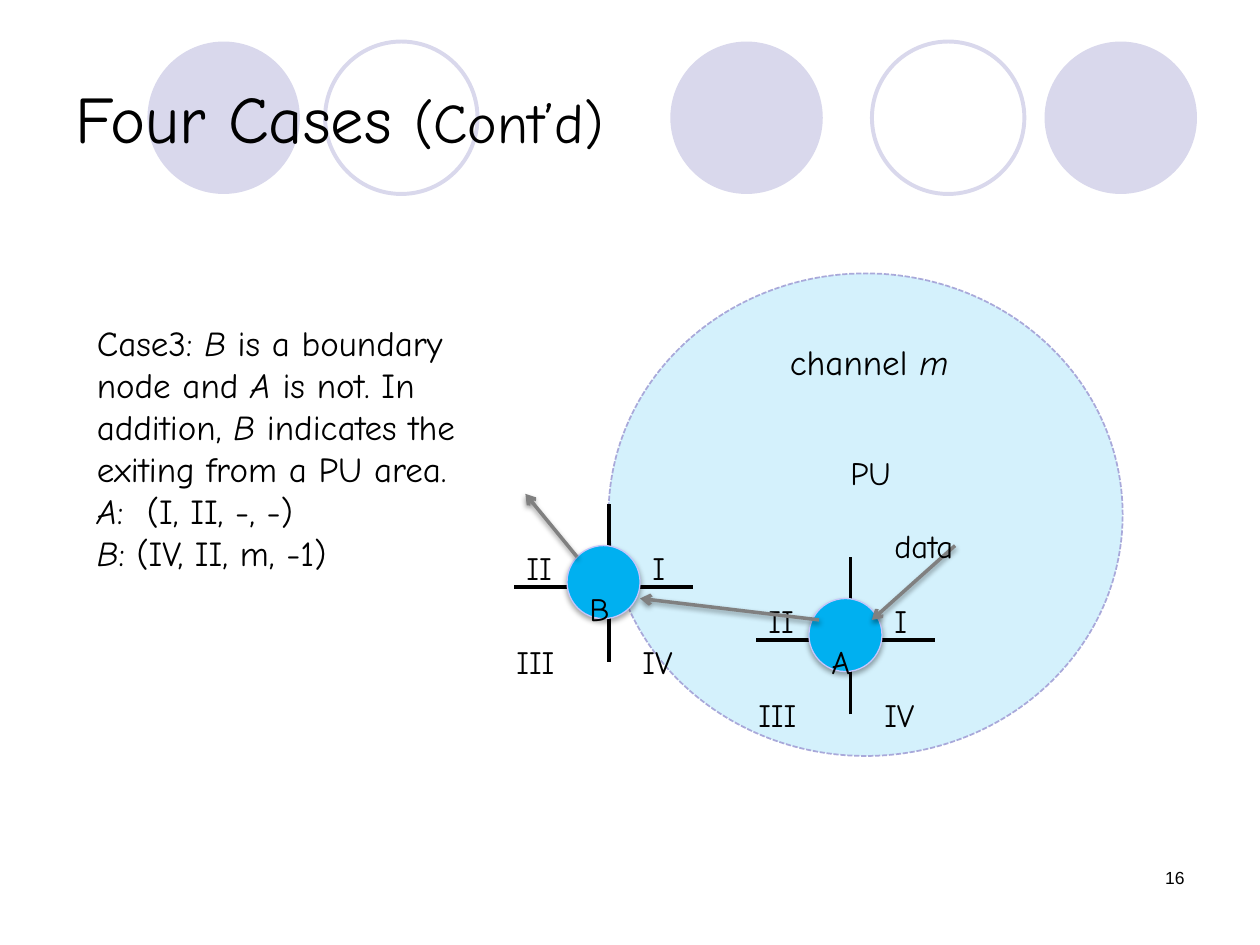
from lxml.etree import SubElement
from pptx import Presentation
from pptx.dml.color import RGBColor
from pptx.enum.dml import MSO_LINE_DASH_STYLE as Dash
from pptx.enum.shapes import MSO_CONNECTOR as Connector, MSO_SHAPE as Shape
from pptx.enum.text import MSO_ANCHOR as Anchor, MSO_AUTO_SIZE as AutoSize, PP_ALIGN as Align
from pptx.oxml.ns import qn
from pptx.util import Pt

PX = 9144  # 100 px to the inch
COLORS = {"ink": "000000", "lavender": "D9D8EC", "node": "00B0F0",
          "node_edge": "C6C6FB", "area_edge": "A9A9DA", "arrow": "808080"}

# Content: text is a list of paragraphs, each a list of (text, format) runs
ITALIC = {"italic": True}
TITLE = [[("Four Cases ", {}), ("(Cont’d)", {"size": 32})]]
CHANNEL = [[("channel ", {}), ("m", ITALIC)]]
CASE = [
    [("Case3: ", {}), ("B ", ITALIC), ("is a boundary node and ", {}), ("A", ITALIC),
     (" is not. In addition, ", {}), ("B", ITALIC),
     (" indicates the exiting from a PU area.", {})],
    [("A", ITALIC), (":  (I, II, -, -)", {})],
    [("B", ITALIC), (": (IV, II, m, -1)", {})],
]
HEADER_CIRCLES = [(532, True), (829, True), (117, True), (692, False), (258, False)]
NODES = {"A": (642, 475), "B": (450, 433)}  # left, top of the node's circle
QUADRANTS = [("I", 58, -33, 42), ("II", -42, -33, 83),  # dx, dy, width
             ("III", -50, 42, 83), ("IV", 50, 42, 67)]
ARROWS_TO_NODES = [((758, 433), (692, 492)), ((650, 492), (508, 475))]
ARROW_OUT = ((458, 442), (417, 392))


def color(name):
    return RGBColor.from_string(COLORS[name])


def write(frame, paragraphs, size=20, align=Align.LEFT, font="Comic Neue",
          baseline=None, anchor=Anchor.TOP):
    frame.word_wrap = True
    frame.auto_size = AutoSize.NONE
    frame.vertical_anchor = anchor
    for i, runs in enumerate(paragraphs):
        paragraph = frame.paragraphs[0] if i == 0 else frame.add_paragraph()
        paragraph.alignment = align
        for words, style in runs:
            run = paragraph.add_run()
            run.text = words
            run.font.name = font
            run.font.size = Pt(style.get("size", size))
            run.font.italic = style.get("italic", False)
            run.font.color.rgb = color("ink")
            if baseline:
                run.font._element.set("baseline", str(baseline))


def add_text(box, paragraphs, **style):
    frame = slide.shapes.add_textbox(*(v * PX for v in box)).text_frame
    write(frame, paragraphs, **style)


def add_label(box, words):
    add_text(box, [[(words, {})]], size=32, baseline=-25000)


def add_shadow(part, alpha, distance):
    effects = part._element.spPr.find(qn("a:effectLst"))
    shadow = SubElement(effects, qn("a:outerShdw"), blurRad=str(Pt(3.1)),
                        dist=str(Pt(distance)), dir="5400000", rotWithShape="0")
    shade = SubElement(shadow, qn("a:srgbClr"), val=COLORS["ink"])
    SubElement(shade, qn("a:alpha"), val=str(alpha * 1000))


def add_ellipse(box, fill=None, edge=None, width=1.0):
    ellipse = slide.shapes.add_shape(Shape.OVAL, *(v * PX for v in box))
    ellipse.shadow.inherit = False
    if fill:
        ellipse.fill.solid()
        ellipse.fill.fore_color.rgb = color(fill)
    else:
        ellipse.fill.background()
    if edge:
        ellipse.line.color.rgb = color(edge)
        ellipse.line.width = Pt(width)
    else:
        ellipse.line.fill.background()
    return ellipse


def add_line(start, end, ink="ink", width=2.25):
    line = slide.shapes.add_connector(Connector.STRAIGHT, *(v * PX for v in start + end))
    line.line.color.rgb = color(ink)
    line.line.width = Pt(width)
    SubElement(line._element.spPr, qn("a:effectLst"))
    return line


def add_arrow(start, end):
    arrow = add_line(start, end, "arrow", 2)
    SubElement(arrow.line._get_or_add_ln(), qn("a:tailEnd"), type="arrow")
    add_shadow(arrow, 38, 1.6)


def add_node(name):
    x, y = NODES[name]
    add_line((x - 42, y + 33), (x + 100, y + 33))
    add_line((x + 33, y + 92), (x + 33, y - 33))
    circle = add_ellipse((x, y, 58, 58), "node", "node_edge", 0.75)
    add_shadow(circle, 35, 1.8)
    add_label((x + 8, y, 42, 42), name)
    for quadrant, dx, dy, width in QUADRANTS:
        add_label((x + dx, y + dy, width, 42), quadrant)


prs = Presentation()
prs.slide_width, prs.slide_height = 1000 * PX, 750 * PX
slide = prs.slides.add_slide(prs.slide_layouts[5])

# Header circles, with the title in front of them
for left, filled in HEADER_CIRCLES:
    box = (left, 33, 121, 121)
    if filled:
        add_ellipse(box, "lavender")
    else:
        add_ellipse(box, edge="lavender", width=2.25)
title = slide.shapes.title
title.left, title.top, title.width, title.height = (v * PX for v in (50, 30, 900, 125))
write(title.text_frame, TITLE, size=38, anchor=Anchor.MIDDLE)
slide.shapes._spTree.append(title._element)

# Page number
add_text((717, 683, 233, 50), [[("16", {})]], size=10, align=Align.RIGHT, font="Arial")

# PU area
area = add_ellipse((483, 217, 408, 383), "node", "area_edge")
area.line.dash_style = Dash.SQUARE_DOT
area_fill = area._element.spPr.find(qn("a:solidFill"))
SubElement(area_fill[0], qn("a:alpha"), val="17000")
add_label((665, 325, 76, 59), "PU")
add_text((617, 265, 183, 60), CHANNEL)

# Case description
add_text((67, 250, 333, 317), CASE)

# Nodes and the data path
add_node("A")
for start, end in ARROWS_TO_NODES:
    add_arrow(start, end)
add_label((700, 383, 100, 42), "data")
add_node("B")
add_arrow(*ARROW_OUT)

prs.save("out.pptx")
